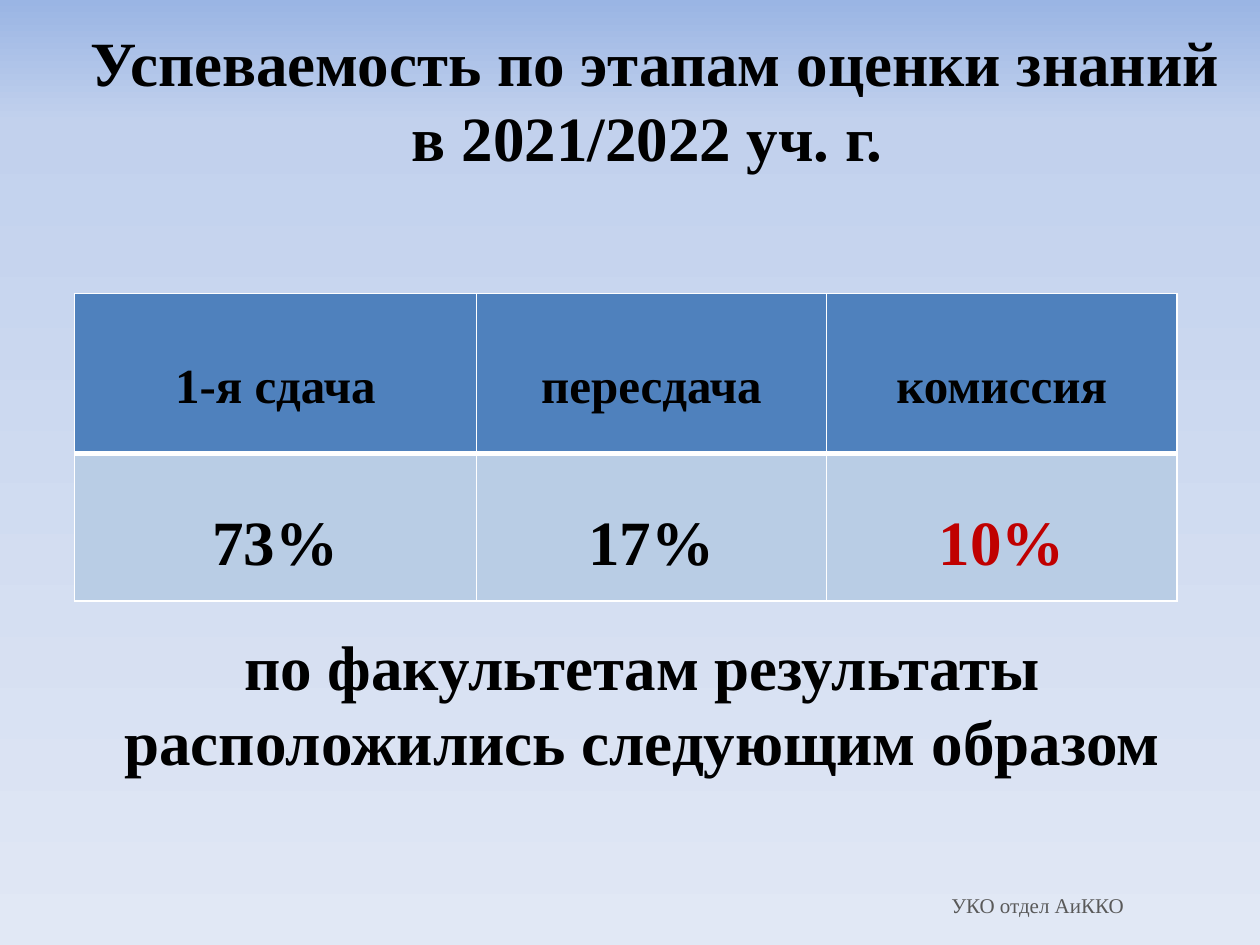
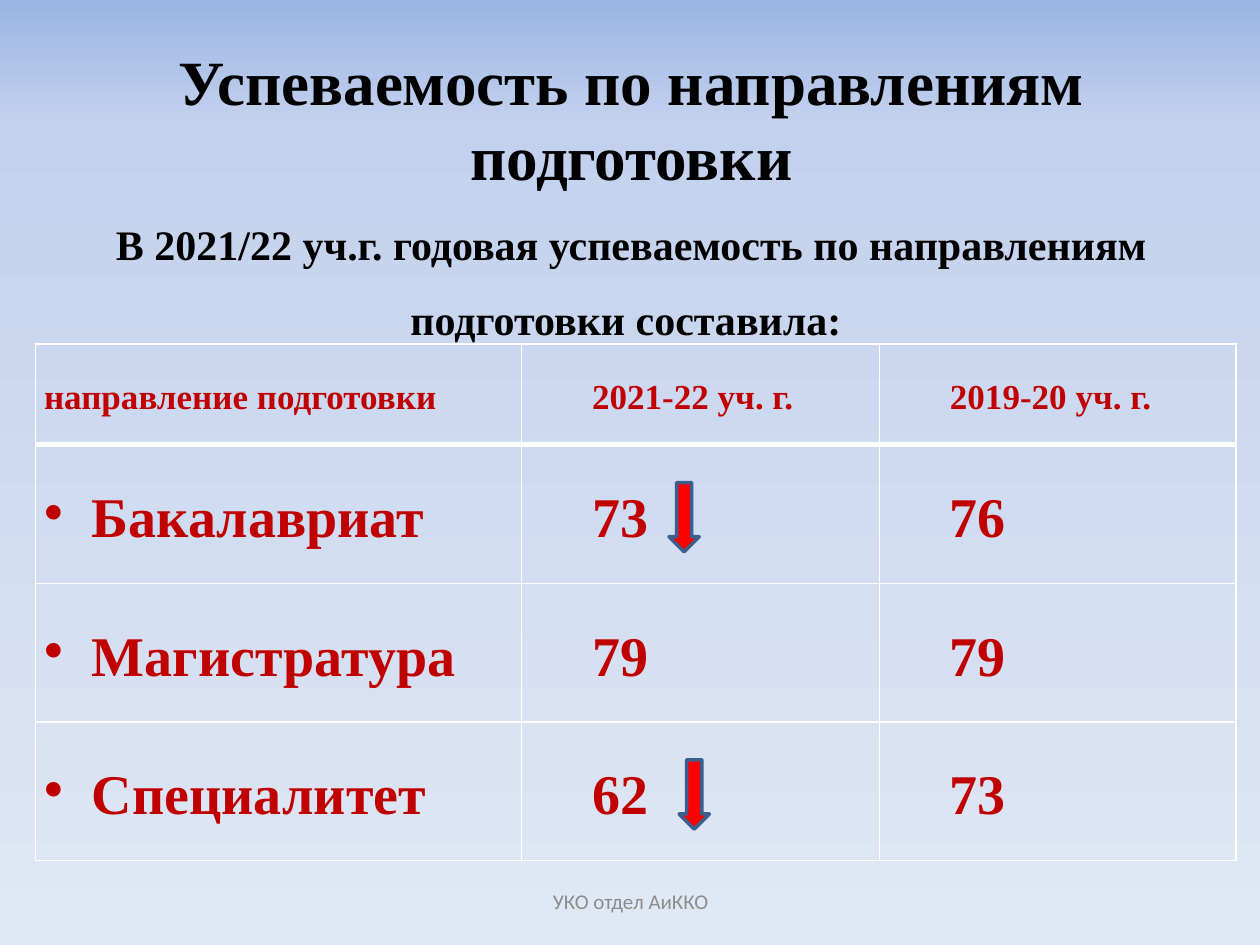
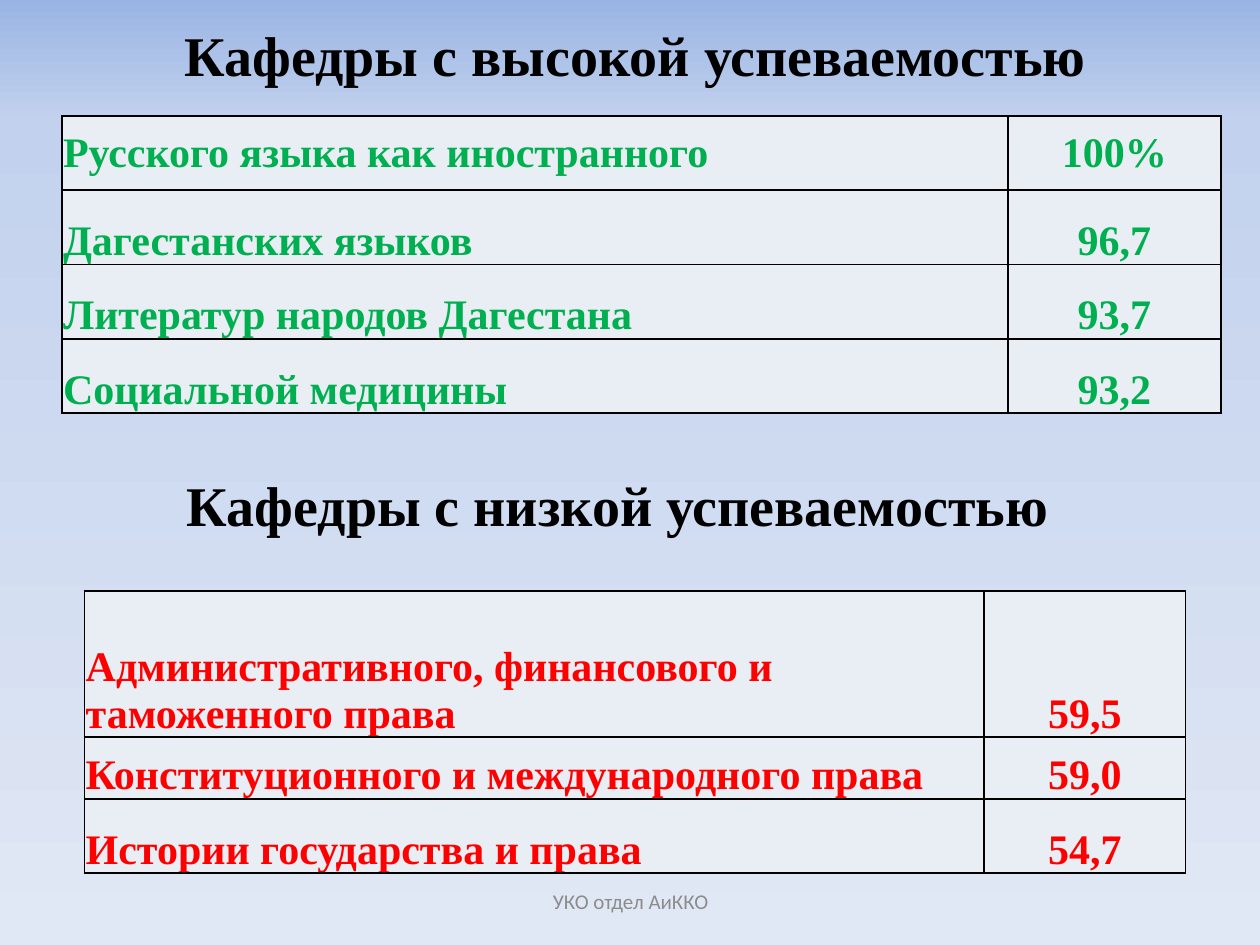
import copy
from dataclasses import dataclass

import pptx
import pptx.dml.color
import pptx.enum.shapes
import pptx.enum.text
import pptx.oxml
import pptx.oxml.ns
import pptx.util
from pptx.util import Inches

ALIGN = pptx.enum.text.PP_ALIGN
ANCHOR = pptx.enum.text.MSO_ANCHOR

SERIF = "Times New Roman"
BLACK, WHITE = "000000", "FFFFFF"
DARK_RED, RED, GREEN = "C00000", "FF0000", "00B050"
HEADER_BLUE, BODY_BLUE, PALE = "4F81BD", "B9CDE5", "E9EDF4"
ARROW_EDGE, FOOTER_GREY, FOOTER_DARK = "3A5F8C", "8C8C8C", "595959"
BACKGROUND_STOPS = [(0, "9AB5E4"), (0.13, "C2D1ED"), (1, "E1E8F5")]
FOOTER_TEXT = "УКО отдел АиККО"


@dataclass
class Box:
    left: float
    top: float
    width: float
    height: float

    def lengths(self) -> tuple:
        return tuple(Inches(n) for n in (self.left, self.top, self.width, self.height))


@dataclass
class Style:
    size: int
    color: str = BLACK
    bold: bool = True
    font: str = SERIF
    align: int = ALIGN.CENTER
    spacing: object = None  # a number of lines or a length
    margin: float = 0
    indent: float = 0
    bullet: bool = False


@dataclass
class Cell:
    text: str
    style: Style
    fill: str = ""
    anchor: int = ANCHOR.MIDDLE


@dataclass
class Grid:
    left: float
    top: float
    columns: list
    heights: list
    rows: list
    line: str = WHITE
    header_rule: int = 1
    insets: tuple = (0.07, 0, 0.07, 0)


def rgb(color: str) -> pptx.dml.color.RGBColor:
    return pptx.dml.color.RGBColor.from_string(color)


def title_style(size: int) -> Style:
    return Style(size, spacing=pptx.util.Pt(round(size * 1.2)))


def format_paragraph(para, style: Style) -> None:
    para.alignment = style.align
    if style.spacing:
        para.line_spacing = style.spacing
    properties = para._p.get_or_add_pPr()
    if style.margin or style.indent:
        properties.set("marL", str(Inches(style.margin)))
        properties.set("indent", str(Inches(style.indent)))
    if style.bullet:
        bullet = pptx.oxml.parse_xml(
            f'<a:buChar {pptx.oxml.ns.nsdecls("a")} char="•"/>')
        properties.append(bullet)
    for span in para.runs:
        span.font.name = style.font
        span.font.size = pptx.util.Pt(style.size)
        span.font.bold = style.bold
        span.font.color.rgb = rgb(style.color)


def add_text(page, box: Box, *paragraphs: tuple, anchor: int = ANCHOR.TOP) -> None:
    frame = page.shapes.add_textbox(*box.lengths()).text_frame
    frame.word_wrap = True
    frame.vertical_anchor = anchor
    frame.text = "\n".join(text for text, _ in paragraphs)
    for para, (_, style) in zip(frame.paragraphs, paragraphs):
        format_paragraph(para, style)


def set_borders(cell, color: str, top: int, bottom: int) -> None:
    properties = cell._tc.get_or_add_tcPr()
    for place, (side, width) in enumerate([("L", 1), ("R", 1), ("T", top), ("B", bottom)]):
        border = pptx.oxml.parse_xml(
            f'<a:ln{side} {pptx.oxml.ns.nsdecls("a")} w="{pptx.util.Pt(width)}">'
            f'<a:solidFill><a:srgbClr val="{color}"/></a:solidFill></a:ln{side}>')
        properties.insert(place, border)


def fill_cell(cell, content: Cell, insets: tuple) -> None:
    cell.text = content.text
    cell.vertical_anchor = content.anchor
    (cell.margin_left, cell.margin_top,
     cell.margin_right, cell.margin_bottom) = (Inches(inset) for inset in insets)
    if content.fill:
        cell.fill.solid()
        cell.fill.fore_color.rgb = rgb(content.fill)
    else:
        cell.fill.background()
    format_paragraph(cell.text_frame.paragraphs[0], content.style)


def add_grid(page, grid: Grid) -> None:
    box = Box(grid.left, grid.top, sum(grid.columns), sum(grid.heights))
    table = page.shapes.add_table(
        len(grid.heights), len(grid.columns), *box.lengths()).table
    table.first_row = table.horz_banding = False
    for column, width in zip(table.columns, grid.columns):
        column.width = Inches(width)
    for number, (row, height) in enumerate(zip(table.rows, grid.heights)):
        row.height = Inches(height)
        top = grid.header_rule if number == 1 else 1
        bottom = grid.header_rule if number == 0 else 1
        for cell, content in zip(row.cells, grid.rows[number]):
            fill_cell(cell, content, grid.insets)
            set_borders(cell, grid.line, top, bottom)


def add_down_arrow(page, left: float, top: float) -> None:
    arrow = page.shapes.add_shape(pptx.enum.shapes.MSO_SHAPE.DOWN_ARROW,
                                  *Box(left, top, 0.24, 0.55).lengths())
    arrow.shadow.inherit = False
    arrow.fill.solid()
    arrow.fill.fore_color.rgb = rgb(RED)
    arrow.line.color.rgb = rgb(ARROW_EDGE)
    arrow.line.width = pptx.util.Pt(2)


def add_footer(page, left: float = 3.42, top: float = 6.95,
               font: str = "Calibri", color: str = FOOTER_GREY) -> None:
    style = Style(12, color, bold=False, font=font)
    add_text(page, Box(left, top, 3.17, 0.4), (FOOTER_TEXT, style), anchor=ANCHOR.MIDDLE)


def paint_background(master) -> None:
    fill = master.background.fill
    fill.gradient()
    fill.gradient_angle = 270
    stop_list = master.element.find(".//" + pptx.oxml.ns.qn("a:gsLst"))
    stop_list.insert(1, copy.deepcopy(stop_list[0]))
    for stop, (position, color) in zip(fill.gradient_stops, BACKGROUND_STOPS):
        stop.color.rgb = rgb(color)
        stop.position = position


def add_stages_slide(page) -> None:
    add_text(page, Box(0.3, 0.14, 9.8, 1.3),
             ("Успеваемость по этапам оценки знаний\vв 2021/2022 уч. г. ", title_style(36)))
    header = Style(28, spacing=1.5)
    share = Style(36, spacing=1.5)
    low_share = Style(36, DARK_RED, spacing=1.5)
    add_grid(page, Grid(
        0.59, 2.33, [3.19, 2.78, 2.78], [1.27, 1.17],
        [[Cell(text, header, HEADER_BLUE) for text in ("1-я сдача", "пересдача", "комиссия")],
         [Cell("73%", share, BODY_BLUE), Cell("17%", share, BODY_BLUE),
          Cell("10%", low_share, BODY_BLUE)]],
        header_rule=3))
    add_text(page, Box(0.27, 4.93, 9.65, 1.92),
             ("по факультетам результаты расположились следующим образом", title_style(36)))
    add_footer(page, 6.65, 6.98, SERIF, FOOTER_DARK)


def add_programmes_slide(page) -> None:
    title = title_style(36)
    add_text(page, Box(0.01, 0.29, 10, 3.12),
             ("Успеваемость по направлениям подготовки", title),
             ("В 2021/22 уч.г. годовая успеваемость по направлениям подготовки составила: ",
              Style(24, spacing=title.spacing)))

    def red(size: int, margin: float = 0, indent: float = 0, bullet: bool = False) -> Style:
        return Style(size, DARK_RED, align=ALIGN.JUSTIFY, spacing=1.15,
                     margin=margin, indent=indent, bullet=bullet)

    programme, year, score = red(32, 0.38, -0.38, True), red(20, indent=0.49), red(32, indent=0.49)
    results = [("Бакалавриат", "73", "76"), ("Магистратура", "79 ", "79"),
               ("Специалитет", "62", "73")]
    rows = [[Cell("направление подготовки ", red(20)),
             Cell("2021-22 уч. г. ", year), Cell("2019-20 уч. г. ", year)]]
    rows += [[Cell(name, programme), Cell(current, score), Cell(earlier, score)]
             for name, current, earlier in results]
    add_grid(page, Grid(0.28, 2.73, [3.86, 2.84, 2.83], [0.8] + [1.1] * 3, rows,
                        header_rule=3))
    add_down_arrow(page, 5.31, 3.83)
    add_down_arrow(page, 5.39, 6.03)
    add_footer(page)


def add_ranking(page, left: float, top: float, columns: list, heights: list,
                color: str, scores: list, first_anchor: int = ANCHOR.BOTTOM) -> None:
    name_style = Style(24, color, align=ALIGN.LEFT)
    score_style = Style(24, color)
    rows = []
    for number, (name, score) in enumerate(scores):
        anchor = ANCHOR.BOTTOM if number else first_anchor
        rows.append([Cell(name, name_style, PALE, anchor),
                     Cell(score, score_style, PALE, anchor)])
    add_grid(page, Grid(left, top, columns, heights, rows, BLACK,
                        insets=(0.01, 0.01, 0.01, 0)))


def add_departments_slide(page) -> None:
    # Strong departments
    add_text(page, Box(0.4, 0.12, 9.29, 0.64),
             ("Кафедры с высокой успеваемостью", title_style(32)))
    add_ranking(page, 0.49, 0.92, [7.51, 1.69], [0.59] * 4, GREEN,
                [("Русского языка как иностранного", "100%"),
                 ("Дагестанских языков", "96,7"),
                 ("Литератур народов Дагестана", "93,7"),
                 ("Социальной медицины", "93,2")], ANCHOR.MIDDLE)
    # Weak departments
    add_text(page, Box(0.26, 3.69, 9.29, 0.64),
             ("Кафедры с низкой успеваемостью", title_style(32)))
    add_ranking(page, 0.67, 4.69, [7.14, 1.6], [1.16, 0.49, 0.59], RED,
                [("Административного, финансового и таможенного права", "59,5"),
                 ("Конституционного и международного права", "59,0"),
                 ("Истории государства и права", "54,7")])
    add_footer(page)


def main() -> None:
    deck = pptx.Presentation()
    deck.slide_width, deck.slide_height = Inches(10), Inches(7.5)
    paint_background(deck.slide_master)
    for build in (add_stages_slide, add_programmes_slide, add_departments_slide):
        build(deck.slides.add_slide(deck.slide_layouts[6]))
    deck.save("out.pptx")


if __name__ == "__main__":
    main()
